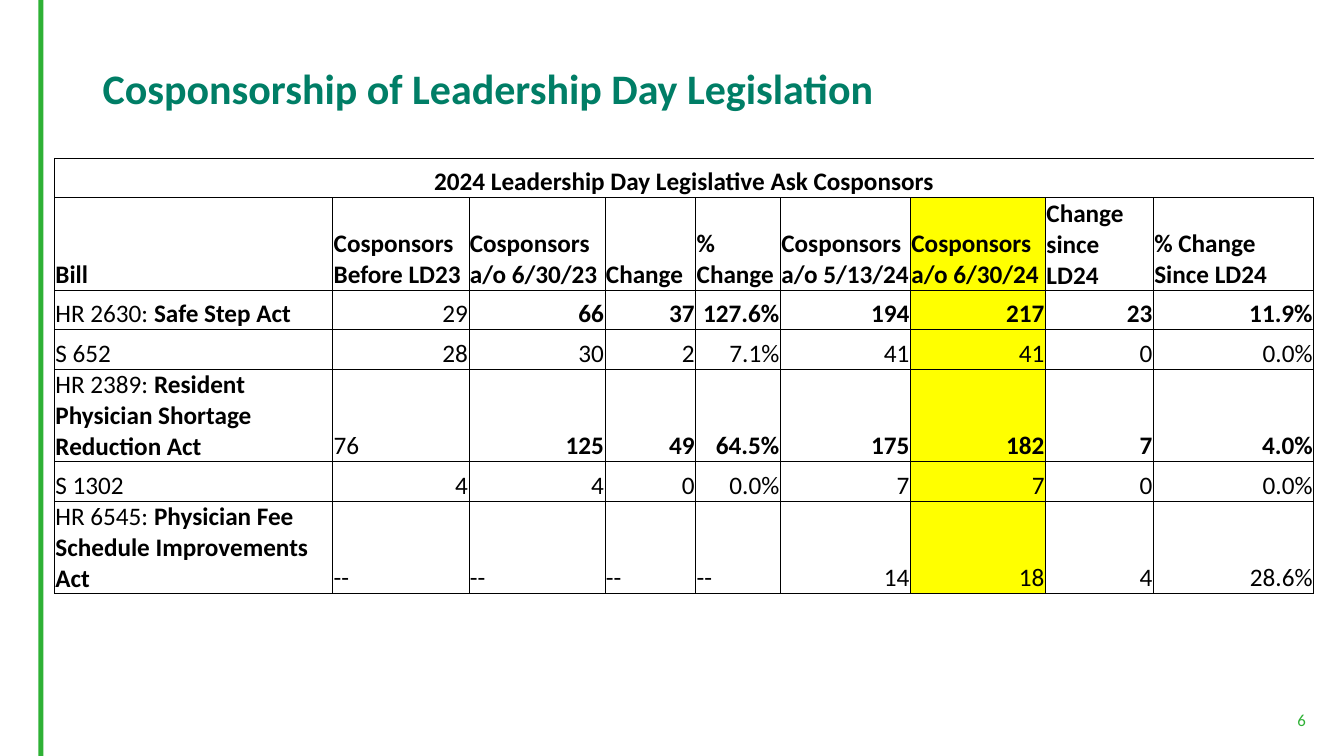
import pptx
import pptx.dml.color
import pptx.enum.text
import pptx.oxml
import pptx.oxml.ns
import pptx.util

EMU_PER_PX = 9144
FONT = "Calibri"
GREEN, TEAL, BLACK, YELLOW = "2EB135", "007E66", "000000", "FFFF00"
ALIGN = pptx.enum.text.PP_ALIGN
ANCHOR = pptx.enum.text.MSO_ANCHOR

TABLE_TITLE = "2024 Leadership Day Legislative Ask Cosponsors"
HEADINGS = [
    "Bill", "Cosponsors Before LD23", "Cosponsors a/o 6/30/23", "Change", "% Change",
    "Cosponsors a/o 5/13/24", "Cosponsors a/o 6/30/24", "Change since LD24",
    "% Change Since LD24",
]
# Bill number, act name, values, whether the values after the first are bold
BILLS = [
    ("HR 2630: ", "Safe Step Act",
     ["29", "66", "37", "127.6%", "194", "217", "23", "11.9%"], True),
    ("S 652", "", ["28", "30", "2", "7.1%", "41", "41", "0", "0.0%"], False),
    ("HR 2389: ", "Resident Physician Shortage Reduction Act",
     ["76", "125", "49", "64.5%", "175", "182", "7", "4.0%"], True),
    ("S 1302", "", ["4", "4", "0", "0.0%", "7", "7", "0", "0.0%"], False),
    ("HR 6545: ", "Physician Fee Schedule Improvements Act",
     ["--", "--", "--", "--", "14", "18", "4", "28.6%"], False),
]
LEFT_ALIGNED_VALUES = {"76", "--"}
COLUMN_WIDTHS = [276, 135, 135, 90, 84, 129, 134, 107, 159]
ROW_HEIGHTS = [39, 92, 39, 39, 92, 39, 92]
HIGHLIGHTED_COLUMN = 6


def px(length):
    return pptx.util.Emu(length * EMU_PER_PX)


def color(hex_string):
    return pptx.dml.color.RGBColor.from_string(hex_string)


class SlideBuilder:
    def __init__(self, slide):
        self.slide = slide

    def style_font(self, font, size, hex_string, bold=None):
        font.name = FONT
        font.size = pptx.util.Pt(size)
        font.color.rgb = color(hex_string)
        font.bold = bold

    def bar(self, left, top, width, height, hex_string):
        shape = self.slide.shapes.add_shape(
            pptx.enum.shapes.MSO_SHAPE.RECTANGLE, px(left), px(top), px(width), px(height))
        shape.shadow.inherit = False
        shape.fill.solid()
        shape.fill.fore_color.rgb = color(hex_string)
        shape.line.fill.background()

    def text(self, box, text, size, hex_string, anchor, align=ALIGN.LEFT, bold=False):
        """Add a text box at box (left, top, width, height) and return its paragraph."""
        frame = self.slide.shapes.add_textbox(*map(px, box)).text_frame
        frame.word_wrap = True
        frame.vertical_anchor = anchor
        paragraph = frame.paragraphs[0]
        paragraph.text = text
        paragraph.alignment = align
        self.style_font(paragraph.font, size, hex_string, bold)
        return paragraph

    def table(self, left, top, column_widths, row_heights):
        table = self.slide.shapes.add_table(
            len(row_heights), len(column_widths), px(left), px(top),
            px(sum(column_widths)), px(sum(row_heights))).table
        table.first_row = table.horz_banding = False
        for column, width in zip(table.columns, column_widths):
            column.width = px(width)
        for row, height in zip(table.rows, row_heights):
            row.height = px(height)
        return table

    def borders(self, cell, sides):
        """Draw the sides named by letters from LRTB and clear the others."""
        properties = cell._tc.get_or_add_tcPr()
        for index, side in enumerate("LRTB"):
            fill = (f'<a:solidFill><a:srgbClr val="{BLACK}"/></a:solidFill>'
                    if side in sides else "<a:noFill/>")
            properties.insert(index, pptx.oxml.parse_xml(
                f'<a:ln{side} {pptx.oxml.ns.nsdecls("a")} w="6350">{fill}</a:ln{side}>'))

    def cell(self, cell, runs, align=ALIGN.LEFT, sides="LRTB", fill=None):
        """Fill a table cell with runs, a list of (text, bold) pairs."""
        self.borders(cell, sides)
        if fill:
            cell.fill.solid()
            cell.fill.fore_color.rgb = color(fill)
        else:
            cell.fill.background()
        cell.margin_left = cell.margin_right = cell.margin_top = px(1)
        cell.margin_bottom = 0
        cell.vertical_anchor = ANCHOR.BOTTOM
        paragraph = cell.text_frame.paragraphs[0]
        paragraph.alignment = align
        self.style_font(paragraph.font, 18, BLACK)
        for text, bold in runs:
            run = paragraph.add_run()
            run.text = text
            self.style_font(run.font, 18, BLACK, bold)


def add_cosponsor_table(builder):
    table = builder.table(54, 157, COLUMN_WIDTHS, ROW_HEIGHTS)
    last_column = len(COLUMN_WIDTHS) - 1
    table.cell(0, 0).merge(table.cell(0, last_column))
    builder.cell(table.cell(0, 0), [(TABLE_TITLE, True)], ALIGN.CENTER, "LTB")
    for column in range(1, last_column + 1):
        builder.cell(table.cell(0, column), [], sides="TB")

    body = [[([(heading, True)], ALIGN.LEFT) for heading in HEADINGS]]
    for number, act, values, strong in BILLS:
        name_runs = [(number, False)] + ([(act, True)] if act else [])
        body.append([(name_runs, ALIGN.LEFT)] + [
            ([(value, strong and index > 0)],
             ALIGN.LEFT if value in LEFT_ALIGNED_VALUES else ALIGN.RIGHT)
            for index, value in enumerate(values)])

    for row, entries in enumerate(body, start=1):
        for column, (runs, align) in enumerate(entries):
            fill = YELLOW if column == HIGHLIGHTED_COLUMN else None
            builder.cell(table.cell(row, column), runs, align, fill=fill)


def main():
    presentation = pptx.Presentation()
    presentation.slide_width, presentation.slide_height = px(1333), px(750)
    builder = SlideBuilder(presentation.slides.add_slide(presentation.slide_layouts[6]))

    builder.bar(38, 0, 5, 750, GREEN)
    title = builder.text((92, 40, 1150, 100), "Cosponsorship of Leadership Day Legislation",
                         30, TEAL, ANCHOR.MIDDLE, bold=True)
    title.line_spacing = 0.9
    page_number = builder.text((957, 699, 348, 30), "6", 12, GREEN, ANCHOR.BOTTOM, ALIGN.RIGHT)
    page_number.space_after = pptx.util.Pt(6)
    add_cosponsor_table(builder)

    presentation.save("out.pptx")


if __name__ == "__main__":
    import pptx.enum.shapes
    main()
